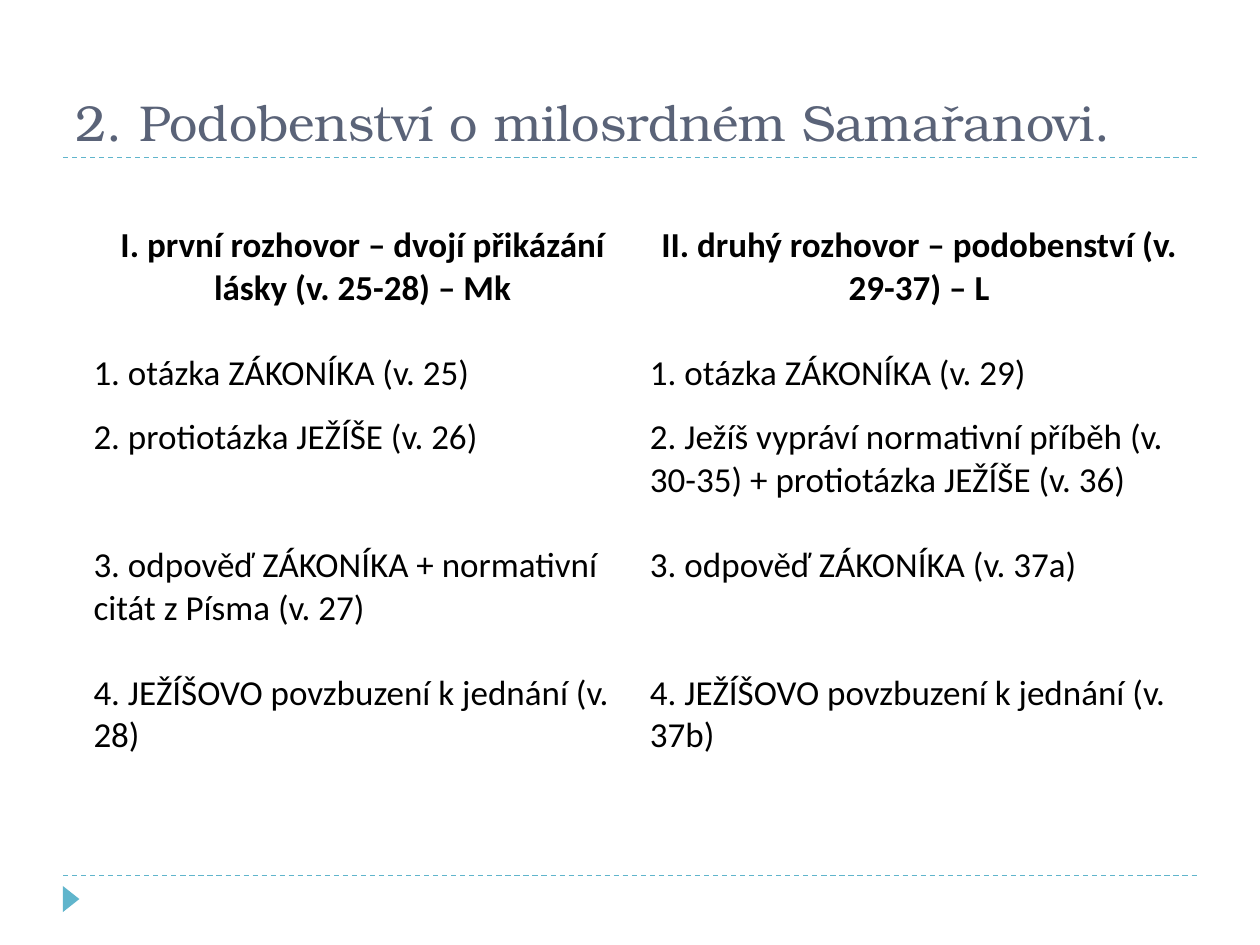
import pptx
import pptx.util
import pptx.dml.color
import pptx.enum.dml
import pptx.enum.shapes
import pptx.enum.text
import pptx.oxml.ns
from lxml import etree

Pt = pptx.util.Pt
RGB = pptx.dml.color.RGBColor.from_string
qn = pptx.oxml.ns.qn
ALIGN = pptx.enum.text.PP_ALIGN
ANCHOR = pptx.enum.text.MSO_ANCHOR
COLORS = {"accent": "60B5CC", "title": "5A6378", "text": "000000", "border": "FFFFFF"}

prs = pptx.Presentation()
prs.slide_width, prs.slide_height = Pt(720), Pt(540)
s = prs.slides.add_slide(prs.slide_layouts[5])

for y in (500.4, 90):
    line = s.shapes.add_connector(
        pptx.enum.shapes.MSO_CONNECTOR.STRAIGHT, Pt(36), Pt(y), Pt(684), Pt(y))
    line.line.color.rgb = RGB(COLORS["accent"])
    line.line.width = Pt(0.75)
    line.line.dash_style = pptx.enum.dml.MSO_LINE.DASH
    etree.SubElement(line._element.spPr, qn("a:effectLst"))

sp = s.shapes.add_shape(
    pptx.enum.shapes.MSO_SHAPE.ISOSCELES_TRIANGLE, Pt(33.1), Pt(509), Pt(15), Pt(9.5))
sp.rotation = 90
sp.shadow.inherit = False
sp.fill.solid()
sp.fill.fore_color.rgb = RGB(COLORS["accent"])
sp.line.fill.background()

title = s.shapes.title
title.left, title.top, title.width, title.height = Pt(36), Pt(12.24), Pt(648), Pt(77.76)
tf = title.text_frame
tf.text = "2. Podobenství o milosrdném Samařanovi."
tf.auto_size = pptx.enum.text.MSO_AUTO_SIZE.NONE
tf.vertical_anchor = ANCHOR.BOTTOM
p = tf.paragraphs[0]
p.alignment = ALIGN.LEFT
p.font.name = "TeX Gyre Bonum"
p.font.size = Pt(28.8)
p.font.color.rgb = RGB(COLORS["title"])

rows = [
    ("I. první rozhovor – dvojí přikázání lásky (v. 25-28) – Mk",
     "II. druhý rozhovor – podobenství (v. 29-37) – L"),
    ("1. otázka ZÁKONÍKA (v. 25)", "1. otázka ZÁKONÍKA (v. 29)"),
    ("2. protiotázka JEŽÍŠE (v. 26)",
     "2. Ježíš vypráví normativní příběh (v. 30-35) + protiotázka JEŽÍŠE (v. 36)"),
    ("3. odpověď ZÁKONÍKA + normativní citát z Písma (v. 27)",
     "3. odpověď ZÁKONÍKA (v. 37a)"),
    ("4. JEŽÍŠOVO povzbuzení k jednání (v. 28)",
     "4. JEŽÍŠOVO povzbuzení k jednání (v. 37b)"),
]
heights = [73, 36.6, 73, 73, 73]
last = len(rows) - 1
table = s.shapes.add_table(
    len(rows), 2, Pt(48.24), Pt(128.2), Pt(636), Pt(sum(heights))).table
table.first_row = table.horz_banding = False
for col in table.columns:
    col.width = Pt(318)

for i, row in enumerate(rows):
    table.rows[i].height = Pt(heights[i])
    for j, text in enumerate(row):
        cell = table.cell(i, j)
        cell.text = text
        cell.margin_left = cell.margin_right = Pt(5.2)
        cell.margin_top = cell.margin_bottom = Pt(0)
        cell.vertical_anchor = ANCHOR.TOP
        tcPr = cell._tc.get_or_add_tcPr()
        for side in "LRTB":
            thick = (i, side) in ((0, "B"), (1, "T"), (last - 1, "B"), (last, "T"))
            ln = etree.SubElement(tcPr, qn("a:ln" + side), w=str(Pt(3 if thick else 1)))
            fill = etree.SubElement(ln, qn("a:solidFill"))
            etree.SubElement(fill, qn("a:srgbClr"), val=COLORS["border"])
        cell.fill.background()
        p = cell.text_frame.paragraphs[0]
        p.alignment = ALIGN.CENTER if i == 0 else ALIGN.LEFT
        p.font.name = "Calibri"
        p.font.size = Pt(20)
        p.font.bold = i == 0
        p.font.color.rgb = RGB(COLORS["text"])

prs.save("out.pptx")
